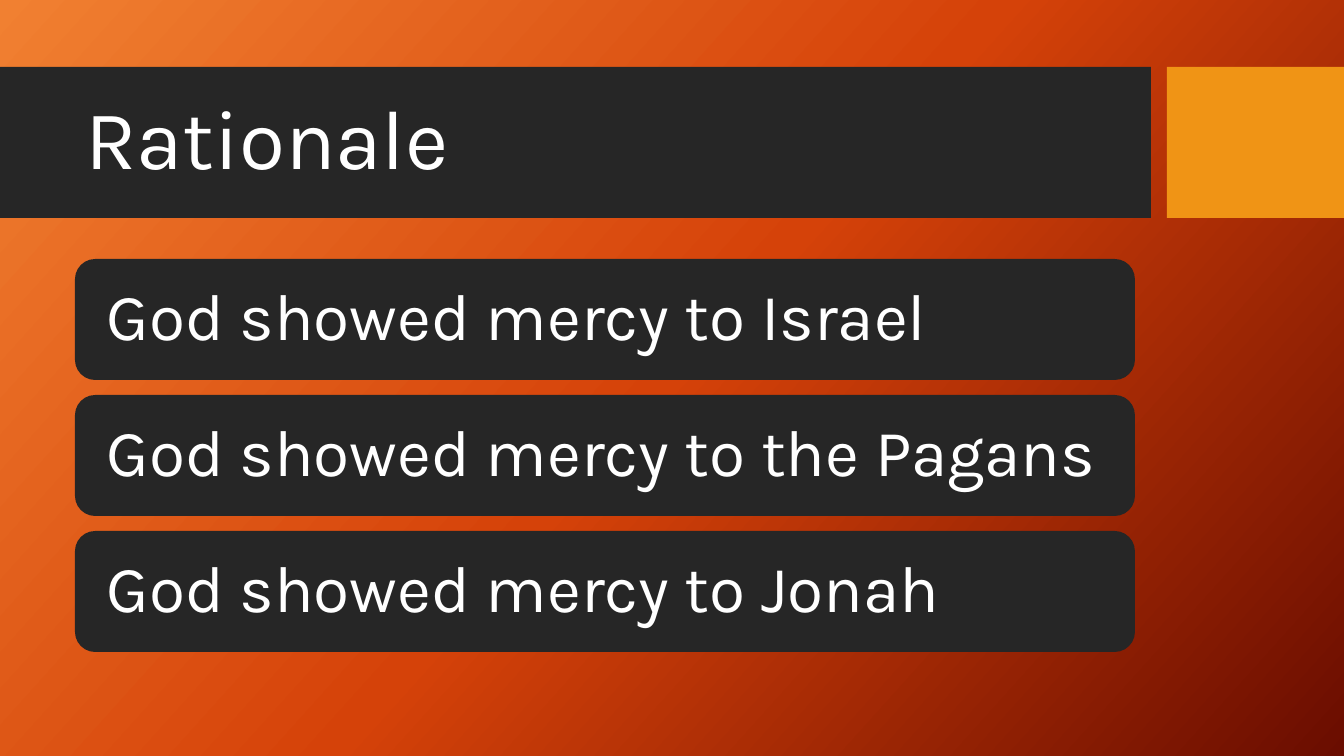
from copy import deepcopy

from pptx import Presentation
from pptx.dml.color import RGBColor
from pptx.enum.shapes import MSO_SHAPE
from pptx.enum.text import MSO_ANCHOR, MSO_AUTO_SIZE, PP_ALIGN
from pptx.oxml.ns import qn
from pptx.util import Pt

RECTANGLE = MSO_SHAPE.RECTANGLE
ROUNDED = MSO_SHAPE.ROUNDED_RECTANGLE
MIDDLE = MSO_ANCHOR.MIDDLE
LEFT = PP_ALIGN.LEFT
NO_AUTOFIT = MSO_AUTO_SIZE.NONE

PX = 914400 / 100.8
FONT = "Karla"
COLORS = {
    "light": "F18031",
    "orange": "D54209",
    "maroon": "6A0D00",
    "dark": "262626",
    "accent": "F09415",
    "white": "FFFFFF",
}


def px(*lengths):
    return [round(length * PX) for length in lengths]


def write_text(shape, text, size, inset, color="white"):
    frame = shape.text_frame
    frame.word_wrap = True
    frame.auto_size = NO_AUTOFIT
    frame.vertical_anchor = MIDDLE
    frame.margin_left, frame.margin_right = px(inset, inset)
    paragraph = frame.paragraphs[0]
    paragraph.alignment = LEFT
    paragraph.line_spacing = 0.9
    run = paragraph.add_run()
    run.text = text
    run.font.name = FONT
    run.font.size = Pt(size)
    run.font.color.rgb = RGBColor.from_string(COLORS[color])


presentation = Presentation()
presentation.slide_width, presentation.slide_height = px(1344, 756)
slide = presentation.slides.add_slide(presentation.slide_layouts[5])

background = slide.background.fill
background.gradient()
background.gradient_angle = 318
stop_list = next(slide.element.iter(qn("a:gsLst")))
stop_list.insert(1, deepcopy(stop_list[0]))
for stop, position, name in zip(
    background.gradient_stops, (0, 0.5, 1), ("light", "orange", "maroon")
):
    stop.position = position
    stop.color.rgb = RGBColor.from_string(COLORS[name])

title = slide.shapes.title
title.left, title.top, title.width, title.height = px(75, 83, 1059, 119)
write_text(title, "Rationale", size=60, inset=10)

title_bar = (RECTANGLE, 0, 67, 1151, 151, "dark", None)
accent_block = (RECTANGLE, 1167, 67, 177, 151, "accent", None)
messages = ["God showed mercy to " + name for name in ("Israel", "the Pagans", "Jonah")]
cards = [
    (ROUNDED, 75, 259 + 136 * row, 1060, 121, "dark", message)
    for row, message in enumerate(messages)
]

for kind, left, top, width, height, color, message in [title_bar, accent_block, *cards]:
    shape = slide.shapes.add_shape(kind, *px(left, top, width, height))
    shape.shadow.inherit = False
    shape.fill.solid()
    shape.fill.fore_color.rgb = RGBColor.from_string(COLORS[color])
    shape.line.fill.background()
    if message:
        write_text(shape, message, size=47, inset=26)
    else:
        title.element.addprevious(shape.element)

presentation.save("out.pptx")
